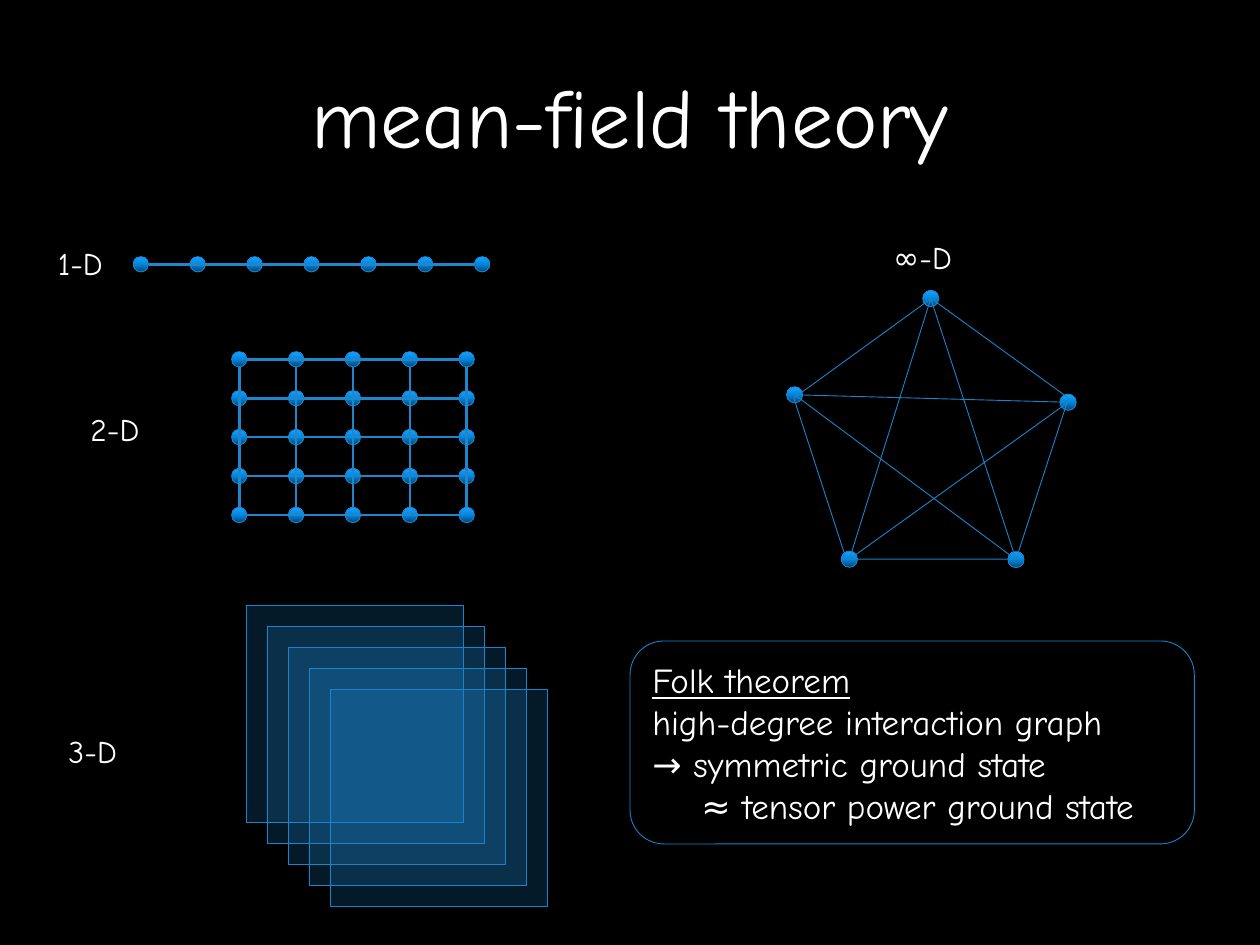
from copy import deepcopy

from lxml import etree
from pptx import Presentation
from pptx.dml.color import RGBColor
from pptx.enum.shapes import MSO_CONNECTOR, MSO_SHAPE
from pptx.enum.text import MSO_ANCHOR, PP_ALIGN
from pptx.oxml.ns import qn
from pptx.util import Pt

STRAIGHT = MSO_CONNECTOR.STRAIGHT
OVAL, SQUARE = MSO_SHAPE.OVAL, MSO_SHAPE.RECTANGLE
PENTAGON, ROUNDED = MSO_SHAPE.REGULAR_PENTAGON, MSO_SHAPE.ROUNDED_RECTANGLE
MIDDLE = MSO_ANCHOR.MIDDLE
LEFT, CENTER = PP_ALIGN.LEFT, PP_ALIGN.CENTER

COLORS = {
    "background": "000000",
    "text": "FFFFFF",
    "outline": "1884CD",
    "bond": "1D86CD",
    "dot_dark": "014573",
    "dot_mid": "0285DD",
    "dot_light": "1AA3FF",
}
DOT = 8.75       # diameter of a lattice site
SPACING = 32.5   # horizontal distance between sites


def rgb(name):
    return RGBColor.from_string(COLORS[name])


def style_text(para, size, **formats):
    values = {"name": "Comic Neue", "size": Pt(size), **formats}
    for key, value in values.items():
        setattr(para.font, key, value)
    para.font.color.rgb = rgb("text")


def outline(shape):
    shape.shadow.inherit = False
    shape.line.color.rgb = rgb("outline")
    shape.line.width = Pt(0.5)


def add_outlined(page, kind, left, top, width, height):
    shape = page.shapes.add_shape(kind, Pt(left), Pt(top), Pt(width), Pt(height))
    outline(shape)
    shape.fill.background()
    return shape


def add_dot(page, x, y, size=DOT):
    """Place a shaded dot centred on x, y."""
    dot = add_outlined(page, OVAL, x - size / 2, y - size / 2, size, size)
    dot.fill.gradient()
    dot.fill.gradient_angle = 90
    stop_list = next(dot._element.spPr.iter(qn("a:gsLst")))
    stop_list.append(deepcopy(stop_list[-1]))
    shades = ("dot_dark", "dot_mid", "dot_light")
    for stop, shade, position in zip(dot.fill.gradient_stops, shades, (0, 0.5, 1)):
        stop.color.rgb = rgb(shade)
        stop.position = position


def add_bond(page, x1, y1, x2, y2):
    bond = page.shapes.add_connector(STRAIGHT, Pt(x1), Pt(y1), Pt(x2), Pt(y2))
    bond.line.color.rgb = rgb("bond")
    bond.line.width = Pt(1.5)
    etree.SubElement(bond._element.spPr, qn("a:effectLst"))


def add_title(page, left, top, width, height):
    box = page.shapes.add_textbox(Pt(left), Pt(top), Pt(width), Pt(height))
    frame = box.text_frame
    frame.word_wrap = True
    frame.vertical_anchor = MIDDLE
    para = frame.paragraphs[0]
    para.text = "mean-field theory"
    para.alignment = CENTER
    style_text(para, 48)


def add_label(page, text, left, top, width):
    box = page.shapes.add_textbox(Pt(left), Pt(top), Pt(width), Pt(29))
    box.text_frame.word_wrap = False
    para = box.text_frame.paragraphs[0]
    para.text = text
    style_text(para, 18)


def add_chain(page, x, y, count):
    """Draw a row of joined sites, the first centred on x, y."""
    for i in range(count):
        add_dot(page, x + i * SPACING, y)
    end = x + (count - 1) * SPACING
    add_bond(page, x + DOT / 2, y, end - DOT / 2, y)


def add_lattice(page, x, y, columns, rows, row_gap):
    for row in range(rows):
        add_chain(page, x, y + row * row_gap, columns)
    bottom = y + (rows - 1) * row_gap
    for column in range(columns):
        site = x + column * SPACING
        add_bond(page, site, y + DOT / 2, site, bottom - DOT / 2)


def add_layers(page, left, top, size, count, step):
    """Stack see-through squares, each shifted down and right."""
    for i in range(count):
        layer = add_outlined(page, SQUARE, left + i * step, top + i * step, size, size)
        layer.fill.solid()
        layer.fill.fore_color.rgb = rgb("bond")
        color = next(layer._element.spPr.iter(qn("a:srgbClr")))
        etree.SubElement(color, qn("a:alpha"), val="20000")


def add_complete_graph(page, left, top, width, height):
    """Join five sites by a pentagon and by the star inside it."""
    star_order = [(78.3, 0), (31.8, 149), (156.8, 59.3), (0.5, 55), (127, 149.2)]
    sites = [(left + x, top + y) for x, y in star_order]
    for x, y in sites:
        add_dot(page, x, y, 9.25)
    add_outlined(page, PENTAGON, left, top, width, height)
    corners = [(Pt(x), Pt(y)) for x, y in sites]
    builder = page.shapes.build_freeform(*corners[0])
    builder.add_line_segments(corners[1:], close=True)
    star = builder.convert_to_shape()
    outline(star)
    star.fill.background()


def add_theorem(page, left, top, width, height):
    box = add_outlined(page, ROUNDED, left, top, width, height)
    frame = box.text_frame
    frame.word_wrap = True
    frame.vertical_anchor = MIDDLE
    lines = [
        ("Folk theorem", True, 0),
        ("high-degree interaction graph", False, 0),
        ("→ symmetric ground state", False, 0),
        ("≈ tensor power ground state", False, 28),
    ]
    for i, (text, underline, indent) in enumerate(lines):
        para = frame.add_paragraph() if i else frame.paragraphs[0]
        para.text = text
        para.alignment = LEFT
        para._p.get_or_add_pPr().set("marL", str(Pt(indent)))
        style_text(para, 20, underline=underline)


def main():
    deck = Presentation()
    deck.slide_width, deck.slide_height = Pt(720), Pt(540)
    page = deck.slides.add_slide(deck.slide_layouts[6])
    page.background.fill.solid()
    page.background.fill.fore_color.rgb = rgb("background")

    add_title(page, 54, 9.5, 612, 112)
    add_label(page, "1-D", 26, 136, 41)
    add_chain(page, 80.5, 151, 7)
    add_label(page, "2-D", 44.6, 231, 44.6)
    add_lattice(page, 136.7, 205.3, 5, 5, 22.25)
    add_label(page, "3-D", 32, 414.7, 44.6)
    add_layers(page, 140.6, 345.8, 124.5, 5, 12)
    add_label(page, "∞-D", 503.3, 132.5, 49)
    add_complete_graph(page, 453.6, 170.6, 157, 149)
    add_theorem(page, 360, 366.3, 322.5, 116)
    deck.save("out.pptx")


if __name__ == "__main__":
    main()
